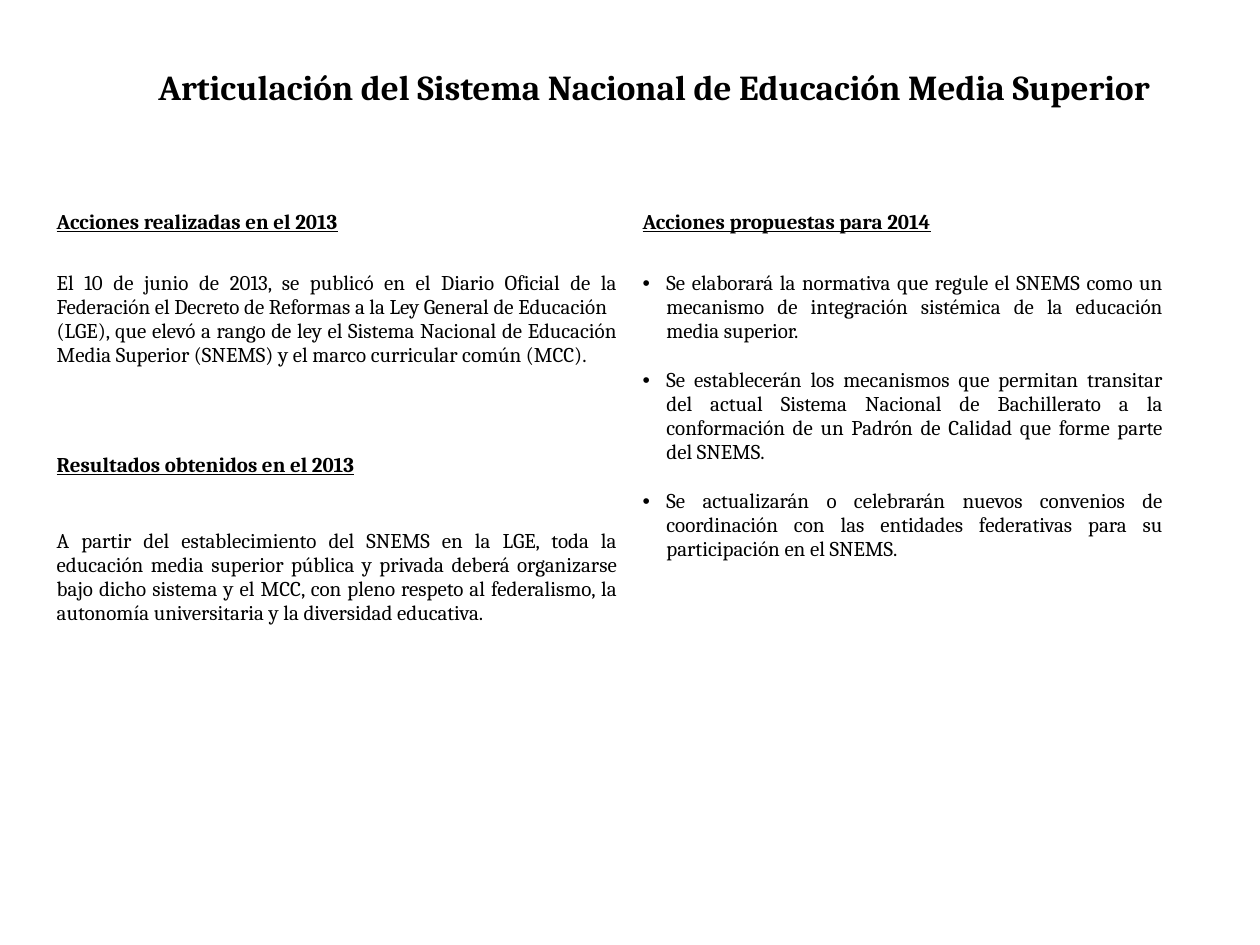
from dataclasses import dataclass

from lxml.etree import SubElement
from pptx import Presentation
from pptx.dml.color import RGBColor
from pptx.enum.shapes import MSO_SHAPE
from pptx.enum.text import MSO_ANCHOR, PP_ALIGN
from pptx.oxml.ns import qn
from pptx.util import Cm, Pt


@dataclass(frozen=True)
class Theme:
    font: str = "Cambria"
    ink: RGBColor = RGBColor(0x00, 0x00, 0x00)
    border: str = "FFFFFF"
    title_size: Pt = Pt(20)
    body_size: Pt = Pt(12)
    item_gap: Pt = Pt(14)
    thin: Pt = Pt(1)
    thick: Pt = Pt(3)


THEME = Theme()
COL_WIDTHS = (11.81, 11)
ROW_HEIGHTS = (0.74, 4.16, 1.04, 5.52)

TITLE = "Articulación del Sistema Nacional de Educación Media Superior"
HEADINGS = {
    (0, 0): "Acciones realizadas en el 2013",
    (0, 1): "Acciones propuestas para 2014",
    (2, 0): "Resultados obtenidos en el 2013",
}
ACTIONS = [
    "El 10 de junio de 2013, se publicó en el Diario Oficial de la Federación "
    "el Decreto de Reformas a la Ley General de Educación",
    "(LGE), que elevó a rango de ley el Sistema Nacional de Educación Media "
    "Superior (SNEMS) y el marco curricular común (MCC).",
]
RESULTS = [
    "A partir del establecimiento del SNEMS en la LGE, toda la educación media "
    "superior pública y privada deberá organizarse bajo dicho sistema y el MCC, "
    "con pleno respeto al federalismo, la autonomía universitaria y la "
    "diversidad educativa.",
]
PROPOSALS = [
    "Se elaborará la normativa que regule el SNEMS como un mecanismo de "
    "integración sistémica de la educación media superior.",
    "Se establecerán los mecanismos que permitan transitar del actual Sistema "
    "Nacional de Bachillerato a la conformación de un Padrón de Calidad que "
    "forme parte del SNEMS.",
    "Se actualizarán o celebrarán nuevos convenios de coordinación con las "
    "entidades federativas para su participación en el SNEMS.",
]


def add_run(p, text, size, bold=False, underline=False):
    r = p.add_run()
    r.text = text
    r.font.name = THEME.font
    r.font.size = size
    r.font.bold = bold
    r.font.underline = underline
    r.font.color.rgb = THEME.ink


def add_title(slide):
    sp = slide.shapes.add_shape(
        MSO_SHAPE.ROUNDED_RECTANGLE, Cm(1.5), Cm(0.74), Cm(23.39), Cm(2.01)
    )
    sp.shadow.inherit = False
    sp.fill.background()
    sp.line.fill.background()
    tf = sp.text_frame
    tf.word_wrap = True
    tf.vertical_anchor = MSO_ANCHOR.MIDDLE
    p = tf.paragraphs[0]
    p.alignment = PP_ALIGN.CENTER
    add_run(p, TITLE, THEME.title_size, bold=True)


def set_borders(cell, bottom):
    tc_pr = cell._tc.get_or_add_tcPr()
    for side in "LRTB":
        width = bottom if side == "B" else THEME.thin
        ln = SubElement(tc_pr, qn(f"a:ln{side}"), w=str(width))
        fill = SubElement(ln, qn("a:solidFill"))
        SubElement(fill, qn("a:srgbClr"), val=THEME.border)


def add_bullet(p):
    p_pr = p._p.get_or_add_pPr()
    indent = Cm(0.48)
    p_pr.set("marL", str(indent))
    p_pr.set("indent", str(-indent))
    SubElement(p_pr, qn("a:buFont"), typeface="Arial")
    SubElement(p_pr, qn("a:buChar"), char="•")


def fill_body(cell, texts, bullets=False):
    cell.margin_top = Cm(0.62)
    tf = cell.text_frame
    for i, text in enumerate(texts):
        p = tf.add_paragraph() if i else tf.paragraphs[0]
        p.alignment = PP_ALIGN.JUSTIFY
        if bullets:
            if i:
                p.space_before = THEME.item_gap
            add_bullet(p)
        add_run(p, text, THEME.body_size)


def add_plan_table(slide):
    frame = slide.shapes.add_table(
        len(ROW_HEIGHTS), len(COL_WIDTHS), Cm(0.89), Cm(4.11),
        Cm(sum(COL_WIDTHS)), Cm(sum(ROW_HEIGHTS)),
    )
    table = frame.table
    table.first_row = False
    table.horz_banding = False
    for column, width in zip(table.columns, COL_WIDTHS):
        column.width = Cm(width)
    for i, (row, height) in enumerate(zip(table.rows, ROW_HEIGHTS)):
        row.height = Cm(height)
        for cell in row.cells:
            set_borders(cell, THEME.thin if i else THEME.thick)
            cell.fill.background()
    table.cell(1, 1).merge(table.cell(3, 1))

    for (row, col), text in HEADINGS.items():
        p = table.cell(row, col).text_frame.paragraphs[0]
        add_run(p, text, THEME.body_size, bold=True, underline=True)
    fill_body(table.cell(1, 0), ACTIONS)
    fill_body(table.cell(3, 0), RESULTS)
    fill_body(table.cell(1, 1), PROPOSALS, bullets=True)


def main():
    prs = Presentation()
    prs.slide_width = Cm(25.4)
    prs.slide_height = Cm(19.05)
    slide = prs.slides.add_slide(prs.slide_layouts[6])
    add_title(slide)
    add_plan_table(slide)
    prs.save("out.pptx")


if __name__ == "__main__":
    main()
